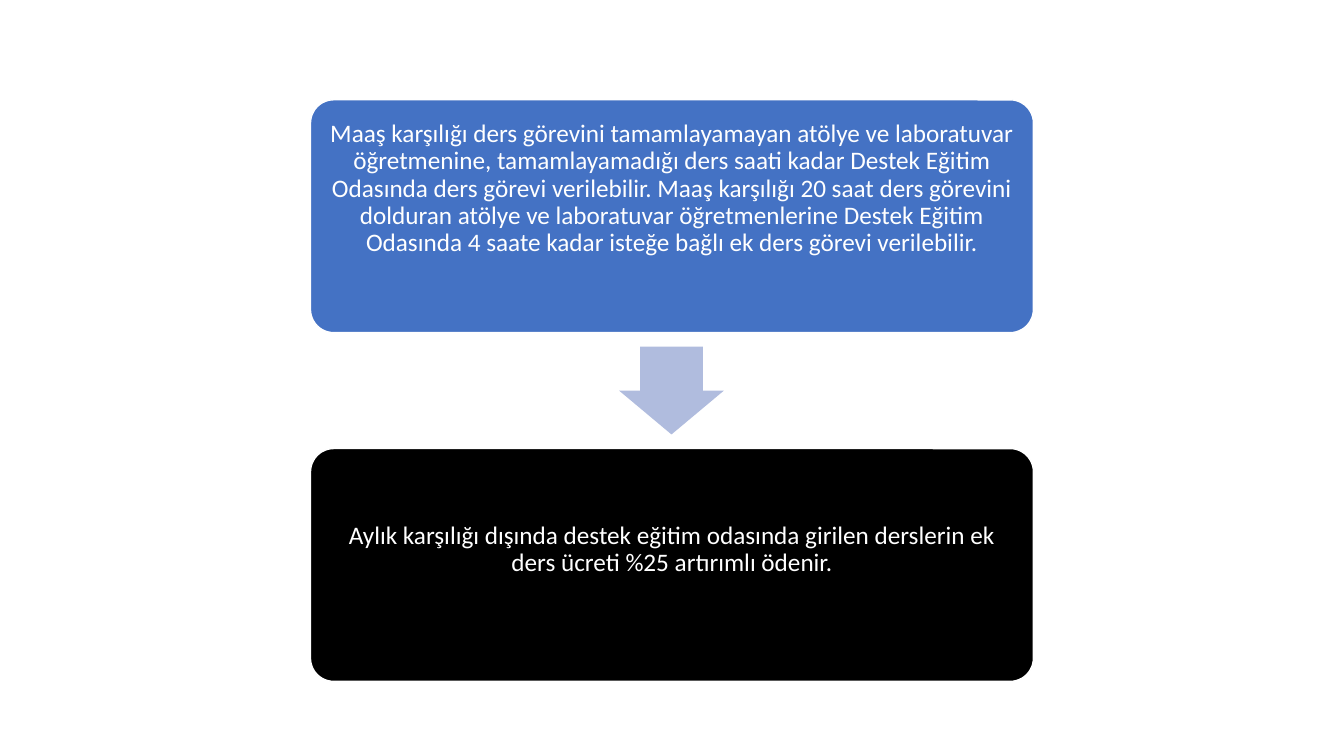
from pptx import Presentation
from pptx import util as u
from pptx.dml.color import RGBColor
from pptx.enum import shapes, text

PX = 9144  # EMU per px, 100 px to the inch
HUES = {"blue": "4472C4", "black": "000000", "white": "FFFFFF", "arrow": "B0BCDE"}
CARD_H, GAP, PAD = 231, 115, 7
STEPS = [
    ("blue", 54, "Maaş karşılığı ders görevini tamamlayamayan atölye ve laboratuvar "
     "öğretmenine, tamamlayamadığı ders saati kadar Destek Eğitim Odasında ders "
     "görevi verilebilir. Maaş karşılığı 20 saat ders görevini dolduran atölye ve "
     "laboratuvar öğretmenlerine Destek Eğitim Odasında 4 saate kadar isteğe bağlı "
     "ek ders görevi verilebilir."),
    ("black", 30, "Aylık karşılığı dışında destek eğitim odasında girilen derslerin "
     "ek ders ücreti %25 artırımlı ödenir."),
]


def hue(name):
    return RGBColor.from_string(HUES[name])


def block(slide, kind, box, fill, ratios):
    """Add a filled, shadowless preset shape in a px box."""
    shape = slide.shapes.add_shape(kind, *(n * PX for n in box))
    shape.shadow.inherit = False
    shape.fill.solid()
    shape.fill.fore_color.rgb = hue(fill)
    for i, ratio in enumerate(ratios):
        shape.adjustments[i] = ratio
    return shape


def card(slide, box, fill, lift, words):
    """Add a rounded card; lift is extra room kept free below its text."""
    shape = block(slide, shapes.MSO_SHAPE.ROUNDED_RECTANGLE, box, fill, [0.1])
    shape.line.color.rgb = hue("white")
    shape.line.width = u.Pt(1)
    frame = shape.text_frame
    form = {"word_wrap": True, "vertical_anchor": text.MSO_ANCHOR.MIDDLE,
            "margin_left": PAD * PX, "margin_right": PAD * PX,
            "margin_top": PAD * PX, "margin_bottom": (PAD + lift) * PX}
    for key, value in form.items():
        setattr(frame, key, value)
    para = frame.paragraphs[0]
    para.alignment = text.PP_ALIGN.CENTER
    para.line_spacing = 0.9
    run = para.add_run()
    run.text = words
    for key, value in {"name": "Calibri", "size": u.Pt(18)}.items():
        setattr(run.font, key, value)
    run.font.color.rgb = hue("white")


def arrow(slide, box):
    """Centre a down arrow in the gap between two cards."""
    left, top, wide, high = box
    w, h = 104, 87
    spot = (left + (wide - w) // 2, top + (high - h) // 2, w, h)
    shape = block(slide, shapes.MSO_SHAPE.DOWN_ARROW, spot, "arrow", [0.6, 0.5])
    shape.line.fill.background()


def flow(slide, left, top, wide):
    for i, (fill, lift, words) in enumerate(STEPS):
        y = top + i * (CARD_H + GAP)
        if i:
            arrow(slide, (left, y - GAP, wide, GAP))
        card(slide, (left, y, wide, CARD_H), fill, lift, words)


def main():
    deck = Presentation()
    deck.slide_width, deck.slide_height = 1333 * PX, 750 * PX
    slide = deck.slides.add_slide(deck.slide_layouts[6])
    flow(slide, 308, 99, 717)
    deck.save("out.pptx")


if __name__ == "__main__":
    main()
